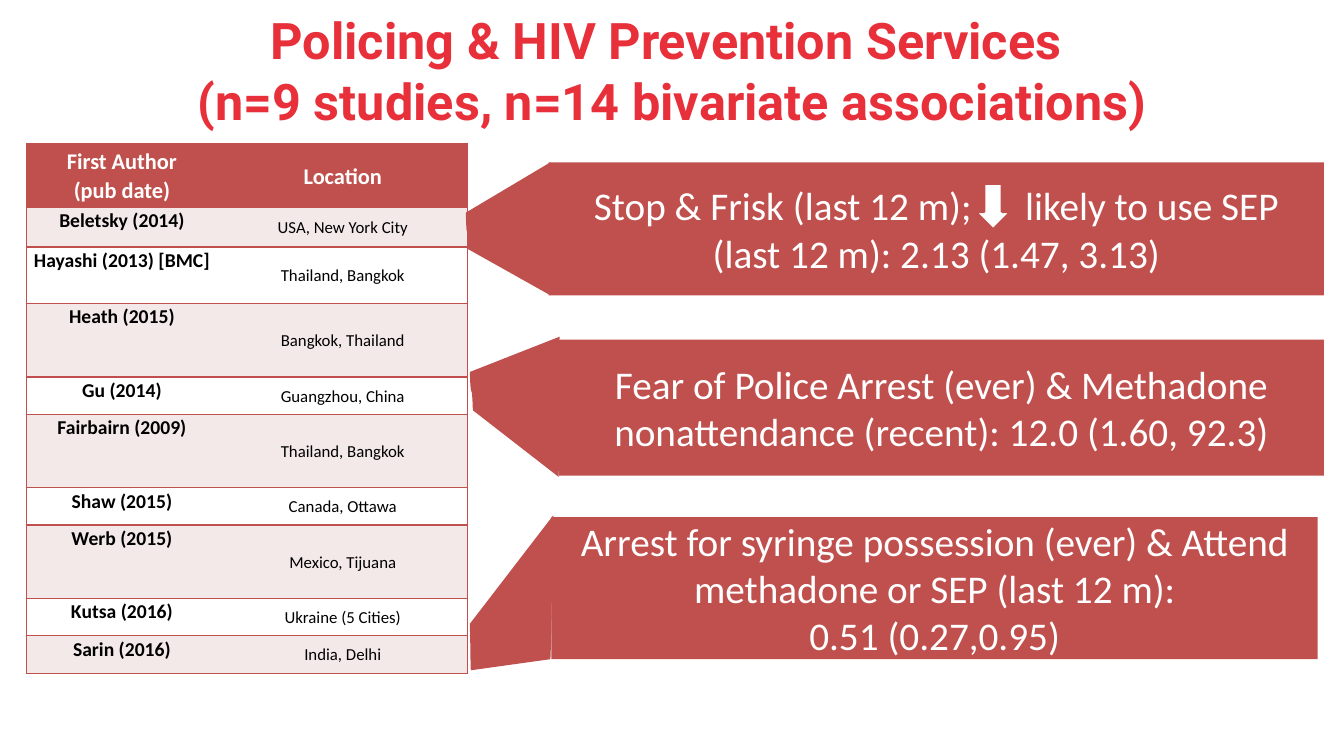
from lxml import etree
from pptx import Presentation
from pptx.dml.color import RGBColor
from pptx.enum.shapes import MSO_SHAPE
from pptx.enum.text import MSO_ANCHOR, MSO_AUTO_SIZE, PP_ALIGN
from pptx.oxml.ns import qn
from pptx.util import Inches, Pt

RECT, ARROW = MSO_SHAPE.RECTANGLE, MSO_SHAPE.DOWN_ARROW
TOP, MIDDLE = MSO_ANCHOR.TOP, MSO_ANCHOR.MIDDLE
CENTER, NO_FIT = PP_ALIGN.CENTER, MSO_AUTO_SIZE.NONE

BRICK = RGBColor(0xC0, 0x50, 0x4D)
BLUSH = RGBColor(0xF4, 0xE9, 0xE9)
SCARLET = RGBColor(0xE8, 0x30, 0x3B)
WHITE = RGBColor(0xFF, 0xFF, 0xFF)
BLACK = RGBColor(0, 0, 0)

PLAIN_STYLE = "{2D5ABB26-0587-4C30-8999-92F81FD0307C}"
TITLE = "Policing & HIV Prevention Services \v(n=9 studies, n=14 bivariate associations)"
WIDTHS = [1.9, 2.48]
STUDIES = [
    ("First Author\v(pub date)", "Location", 0.64),
    ("Beletsky (2014)", "USA, New York City", 0.39),
    ("Hayashi (2013) [BMC]", "Thailand, Bangkok", 0.56),
    ("Heath (2015)", "Bangkok, Thailand", 0.73),
    ("Gu (2014)", "Guangzhou, China", 0.37),
    ("Fairbairn (2009)", "Thailand, Bangkok", 0.73),
    ("Shaw (2015)", "Canada, Ottawa", 0.37),
    ("Werb (2015)", "Mexico, Tijuana", 0.73),
    ("Kutsa (2016)", "Ukraine (5 Cities)", 0.37),
    ("Sarin (2016)", "India, Delhi", 0.37),
]
FINDINGS = [
    ((5.44, 1.61, 7.69, 1.32),
     [["Stop & Frisk (last 12 m);", " ", "likely to use SEP (last 12 m): 2.13 (1.47, 3.13)"]],
     [(-0.8, 0.86), (-0.82, 0.5), (0.02, 0), (0.02, 1.32)]),
    ((5.54, 3.37, 7.59, 1.35),
     [["Fear of Police Arrest (ever) & Methadone nonattendance (recent): 12.0 (1.60, 92.3)"]],
     [(-0.85, 0.7), (-0.88, 0.32), (0.01, -0.03), (0, 1.36)]),
    ((5.47, 5.13, 7.6, 1.41),
     [["Arrest for syringe possession (ever) & Attend methadone or SEP (last 12 m):"],
      ["0.51 (0.27,0.95)"]],
     [(-0.8, 1.52), (-0.81, 1.06), (0.02, -0.02), (-0.01, 1.41)]),
]


def style(font, name, size, color, bold=False):
    """Set the face, size, colour and weight of a font."""
    font.name, font.size, font.bold = name, Pt(size), bold
    font.color.rgb = color


def paint(shape, color):
    """Give a shape a flat fill with neither line nor shadow."""
    shape.shadow.inherit = False
    shape.fill.solid()
    shape.fill.fore_color.rgb = color
    shape.line.fill.background()


def border(cell, sides):
    """Draw one-point brick borders on the named sides of a cell."""
    props = cell._tc.get_or_add_tcPr()
    for spot, side in enumerate(sides):
        line = etree.Element(qn("a:ln" + side), w=str(Pt(1)))
        fill = etree.SubElement(line, qn("a:solidFill"))
        etree.SubElement(fill, qn("a:srgbClr"), val=str(BRICK))
        props.insert(spot, line)


def add_title(slide, box):
    """Place and format the slide title."""
    title = slide.shapes.title
    title.left, title.top, title.width, title.height = map(Inches, box)
    frame = title.text_frame
    frame.text = TITLE
    frame.auto_size, frame.vertical_anchor = NO_FIT, MIDDLE
    para = frame.paragraphs[0]
    para.alignment = CENTER
    for run in para.runs:
        style(run.font, "Roboto", 36, SCARLET, True)


def fill_cell(cell, text, row, col):
    """Write one table cell and format it by its row and column."""
    head = row == 0
    cell.text = text
    cell.margin_left = cell.margin_right = Inches(0.07)
    cell.margin_top = cell.margin_bottom = 0
    cell.vertical_anchor = MIDDLE if head or col else TOP
    cell.fill.solid()
    cell.fill.fore_color.rgb = BRICK if head else BLUSH if row % 2 else WHITE
    border(cell, ["RTB", "LTB"][col == 0])
    para = cell.text_frame.paragraphs[0]
    para.alignment, para.line_spacing = CENTER, 1.07
    size = 16 if head else 12 if col else 14
    for run in para.runs:
        style(run.font, "Calibri", size, WHITE if head else BLACK, head or col == 0)


def add_studies(slide, box):
    """Build the table of studies and their locations."""
    table = slide.shapes.add_table(len(STUDIES), len(WIDTHS), *map(Inches, box)).table
    table._tbl.tblPr.find(qn("a:tableStyleId")).text = PLAIN_STYLE
    for col, width in enumerate(WIDTHS):
        table.columns[col].width = Inches(width)
    for row, (author, place, height) in enumerate(STUDIES):
        table.rows[row].height = Inches(height)
        for col, text in enumerate((author, place)):
            fill_cell(table.cell(row, col), text, row, col)


def bend(start, end, dx, dy):
    """Return points on an S-shaped cubic curve between two corners."""
    knots = [start, (start[0] - dx, start[1] + dy), (end[0] + dx, end[1] - dy), end]
    points = []
    for step in range(9):
        t = step / 8
        parts = ((1 - t) ** 3, 3 * t * (1 - t) ** 2, 3 * t * t * (1 - t), t ** 3)
        points.append(tuple(sum(p * k[axis] for p, k in zip(parts, knots)) for axis in (0, 1)))
    return points


def add_flap(slide, left, top, corners):
    """Draw the flap that links a finding to its table row."""
    low, high, upper, lower = [(left + x, top + y) for x, y in corners]
    edge = bend(low, high, 0.01, -0.34) + bend(upper, lower, 0.02, 0.44)
    points = [(Inches(x), Inches(y)) for x, y in edge]
    maker = slide.shapes.build_freeform(*points[0], scale=1.0)
    maker.add_line_segments(points[1:], close=True)
    paint(maker.convert_to_shape(), BRICK)


def add_finding(slide, box, lines, corners):
    """Place one finding panel with its text and flap."""
    panel = slide.shapes.add_shape(RECT, *map(Inches, box))
    paint(panel, BRICK)
    frame = panel.text_frame
    frame.word_wrap, frame.vertical_anchor = True, MIDDLE
    for spot, pieces in enumerate(lines):
        para = frame.add_paragraph() if spot else frame.paragraphs[0]
        para.alignment = CENTER
        for piece in pieces:
            run = para.add_run()
            run.text = piece
            style(run.font, "Calibri", 28, WHITE)
            if piece == " ":
                run._r.get_or_add_rPr().set("spc", "3200")
    add_flap(slide, box[0], box[1], corners)


def add_arrow(slide, box):
    """Place the down arrow within the first finding."""
    left, top = box[:2]
    arrow = slide.shapes.add_shape(ARROW, *map(Inches, (left + 4.23, top + 0.21, 0.36, 0.46)))
    paint(arrow, WHITE)
    arrow.line.color.rgb = BRICK
    arrow.line.width = Pt(2)


def main():
    """Build the slide and save it."""
    deck = Presentation()
    deck.slide_width, deck.slide_height = Inches(13.33), Inches(7.5)
    slide = deck.slides.add_slide(deck.slide_layouts[5])
    add_title(slide, (0.67, 0.07, 12, 1.25))
    add_studies(slide, (0.26, 1.42, 4.38, 5.23))
    for box, lines, corners in FINDINGS:
        add_finding(slide, box, lines, corners)
    add_arrow(slide, FINDINGS[0][0])
    deck.save("out.pptx")


if __name__ == "__main__":
    main()
